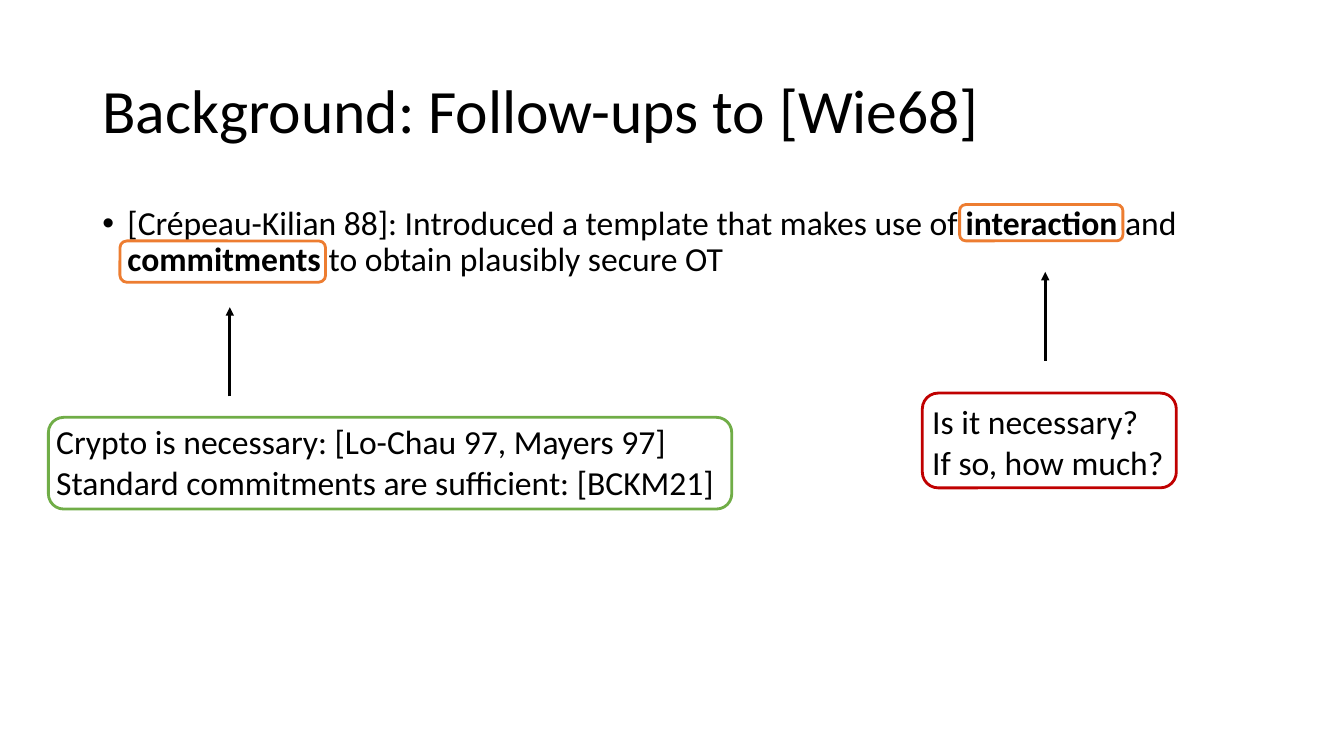
from dataclasses import dataclass

from lxml import etree
from pptx import Presentation
from pptx.dml.color import RGBColor
from pptx.enum.shapes import MSO_CONNECTOR, MSO_SHAPE
from pptx.enum.text import MSO_ANCHOR
from pptx.oxml.ns import qn
from pptx.util import Inches, Pt

ROUNDED = MSO_SHAPE.ROUNDED_RECTANGLE
STRAIGHT = MSO_CONNECTOR.STRAIGHT
TOP, MIDDLE = MSO_ANCHOR.TOP, MSO_ANCHOR.MIDDLE
BLANK_LAYOUT = 6
CELL = Inches(1) / 12  # the slide is a grid of 160 columns by 90 rows


@dataclass(frozen=True)
class Theme:
    font: str = "Calibri"
    ink: str = "000000"
    highlight: str = "ED7D31"
    settled: str = "70AD47"
    open_question: str = "C00000"
    title_size: int = 44
    text_size: int = 24
    line_width: int = 2


@dataclass(frozen=True)
class Box:
    left: float
    top: float
    width: float
    height: float

    def inner(self, column, row, width, height):
        return Box(self.left + column, self.top + row, width, height)

    def emu(self):
        return [cells(n) for n in (self.left, self.top, self.width, self.height)]


THEME = Theme()


def cells(count):
    return round(count * CELL)


def add_text(page, box, paragraphs, size, anchor=TOP, wrap=True):
    """Each paragraph is a list of (wording, bold) runs."""
    frame = page.shapes.add_textbox(*box.emu()).text_frame
    frame.word_wrap = wrap
    frame.vertical_anchor = anchor
    for index, runs in enumerate(paragraphs):
        para = frame.paragraphs[0] if index == 0 else frame.add_paragraph()
        for wording, bold in runs:
            span = para.add_run()
            span.text = wording
            span.font.name = THEME.font
            span.font.size = Pt(size)
            span.font.bold = bold
            span.font.color.rgb = RGBColor.from_string(THEME.ink)
    return frame


def add_outline(page, box, color):
    outline = page.shapes.add_shape(ROUNDED, *box.emu())
    outline.shadow.inherit = False
    outline.fill.background()
    outline.line.color.rgb = RGBColor.from_string(color)
    outline.line.width = Pt(THEME.line_width)


def add_up_arrow(page, column, row, length):
    arrow = page.shapes.add_connector(
        STRAIGHT, cells(column), cells(row), cells(column), cells(row - length))
    arrow.line.color.rgb = RGBColor.from_string(THEME.ink)
    arrow.line.width = Pt(THEME.line_width)
    etree.SubElement(arrow.line._get_or_add_ln(), qn("a:tailEnd"), type="triangle")
    etree.SubElement(arrow._element.spPr, qn("a:effectLst"))


def add_title(page, box):
    frame = add_text(page, box, [[("Background: Follow-ups to [Wie68]", False)]],
                     THEME.title_size, MIDDLE)
    frame.paragraphs[0].line_spacing = 0.9


def add_body(page, box):
    frame = add_text(page, box, [[
        ("[Crépeau-Kilian 88]: Introduced a template that makes use of ", False),
        ("interaction", True),
        (" and", False),
        (" commitments", True),
        (" to obtain plausibly secure OT", False),
    ]], THEME.text_size)
    para = frame.paragraphs[0]
    para.line_spacing = 0.9
    para.space_before = Pt(10)

    # Hanging bullet
    properties = para._p.get_or_add_pPr()
    properties.set("marL", str(cells(3)))
    properties.set("indent", str(cells(-3)))
    etree.SubElement(properties, qn("a:buFont"), typeface="Arial")
    etree.SubElement(properties, qn("a:buChar"), char="•")

    # Frames around the two key words
    for word_box in (box.inner(3.28, 4.68, 24.48, 4.92),
                     box.inner(103.24, 0.36, 19.44, 4.32)):
        add_outline(page, word_box, THEME.highlight)


def add_callout(page, box, text_box, lines, color, arrow_column, arrow_gap, wrap):
    """Framed remark with an arrow rising above it to a key word."""
    add_up_arrow(page, box.left + arrow_column, box.top - arrow_gap, 10.6)
    add_outline(page, box, color)
    add_text(page, text_box, [[(line, False)] for line in lines],
             THEME.text_size, wrap=wrap)


def build_slide(deck):
    page = deck.slides.add_slide(deck.slide_layouts[BLANK_LAYOUT])
    add_title(page, Box(11, 4.8, 138, 17.4))
    add_body(page, Box(11, 24, 138, 57.1))

    # Remark on commitments
    remark = Box(5.76, 49.68, 81.36, 10.92)
    add_callout(page, remark, remark.inner(-0.24, -0.12, 81.6, 10.92),
                ["Crypto is necessary: [Lo-Chau 97, Mayers 97]",
                 "Standard commitments are sufficient: [BCKM21]"],
                THEME.settled, arrow_column=21.6, arrow_gap=2.5, wrap=True)

    # Questions on interaction
    questions = Box(109.8, 46.8, 30.24, 11.28)
    add_callout(page, questions, questions.inner(0, 0.36, 30.24, 10.92),
                ["Is it necessary?", "If so, how much?"],
                THEME.open_question, arrow_column=14.64, arrow_gap=3.84, wrap=False)


def main():
    deck = Presentation()
    deck.slide_width, deck.slide_height = cells(160), cells(90)
    build_slide(deck)
    deck.save("out.pptx")


if __name__ == "__main__":
    main()
